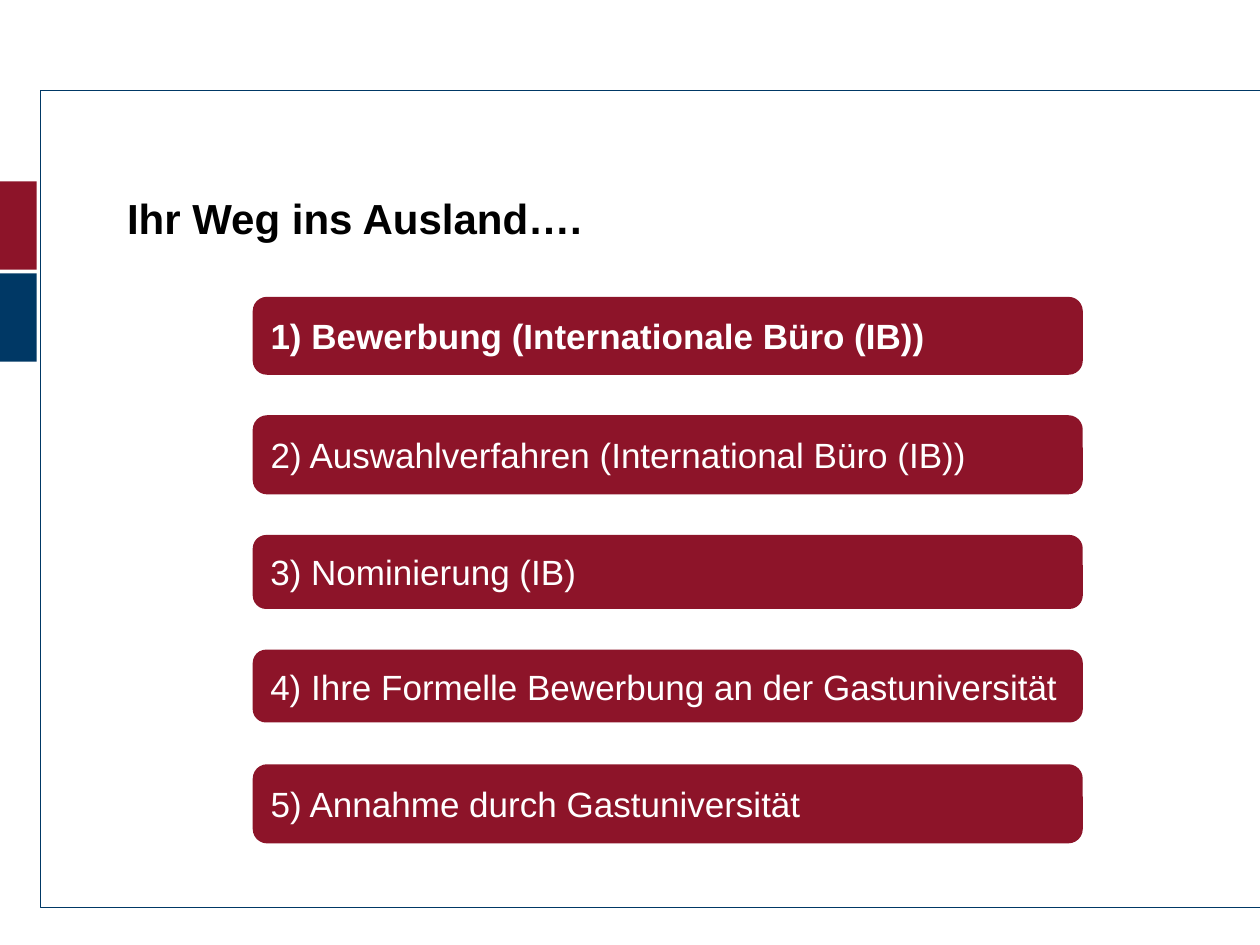
from pptx import Presentation
from pptx import util as u
from pptx.dml.color import RGBColor
from pptx.enum import shapes, text

RED = RGBColor(0x8D, 0x14, 0x29)
BLUE = RGBColor(0x00, 0x38, 0x65)
WHITE = RGBColor(0xFF, 0xFF, 0xFF)
BLACK = RGBColor(0, 0, 0)
FONT = "Arial"

# Label, top and height of each step
STEPS = [
    ("1) Bewerbung (Internationale Büro (IB))", 2.37, 0.59),
    ("2) Auswahlverfahren (International Büro (IB))", 3.31, 0.6),
    ("3) Nominierung (IB)", 4.26, 0.56),
    ("4) Ihre Formelle Bewerbung an der Gastuniversität", 5.17, 0.55),
    ("5) Annahme durch Gastuniversität", 6.08, 0.6),
]


def add_block(slide, kind, left, top, width, height, color):
    shape = slide.shapes.add_shape(
        kind, u.Inches(left), u.Inches(top), u.Inches(width), u.Inches(height))
    shape.shadow.inherit = False
    shape.fill.solid()
    shape.fill.fore_color.rgb = color
    shape.line.fill.background()
    return shape


def write(shape, words, size, color, bold):
    shape.text_frame.word_wrap = True
    paragraph = shape.text_frame.paragraphs[0]
    paragraph.text = words
    paragraph.alignment = text.PP_ALIGN.LEFT
    paragraph.font.name = FONT
    paragraph.font.size = u.Pt(size)
    paragraph.font.bold = bold
    paragraph.font.color.rgb = color


def add_side_tabs(slide, left, top, width, height, gap):
    for index, color in enumerate((RED, BLUE)):
        add_block(slide, shapes.MSO_SHAPE.RECTANGLE,
                  left, top + index * (height + gap), width, height, color)


def add_frame(slide, left, top, width, height):
    right, bottom = left + width, top + height
    builder = slide.shapes.build_freeform(
        u.Inches(right), u.Inches(top), scale=1.0)
    corners = [(left, top), (left, bottom), (right, bottom)]
    builder.add_line_segments(
        [(u.Inches(x), u.Inches(y)) for x, y in corners], close=False)
    frame = builder.convert_to_shape()
    frame.shadow.inherit = False
    frame.fill.background()
    frame.line.color.rgb = BLUE
    frame.line.width = u.Pt(0.75)


def add_title(slide, left, top, width, height):
    title = slide.shapes.add_textbox(
        u.Inches(left), u.Inches(top), u.Inches(width), u.Inches(height))
    write(title, "Ihr Weg ins Ausland….", 24, BLACK, True)
    title.text_frame.auto_size = text.MSO_AUTO_SIZE.SHAPE_TO_FIT_TEXT


def add_steps(slide, left, width):
    for index, (label, top, height) in enumerate(STEPS):
        step = add_block(slide, shapes.MSO_SHAPE.ROUNDED_RECTANGLE,
                         left, top, width, height, RED)
        step.line.color.rgb = RED
        step.line.width = u.Pt(2)
        step.text_frame.vertical_anchor = text.MSO_ANCHOR.MIDDLE
        write(step, label, 20, WHITE, index == 0)  # first step is current


def main():
    presentation = Presentation()
    presentation.slide_width = u.Inches(10)
    presentation.slide_height = u.Inches(7.5)
    slide = presentation.slides.add_slide(presentation.slide_layouts[6])

    # Page decoration
    add_side_tabs(slide, 0, 1.44, 0.29, 0.7, 0.03)
    add_frame(slide, 0.32, 0.72, 9.68, 6.48)

    # Content
    add_title(slide, 0.91, 1.48, 4.42, 0.5)
    add_steps(slide, 2.02, 6.56)

    presentation.save("out.pptx")


if __name__ == "__main__":
    main()
